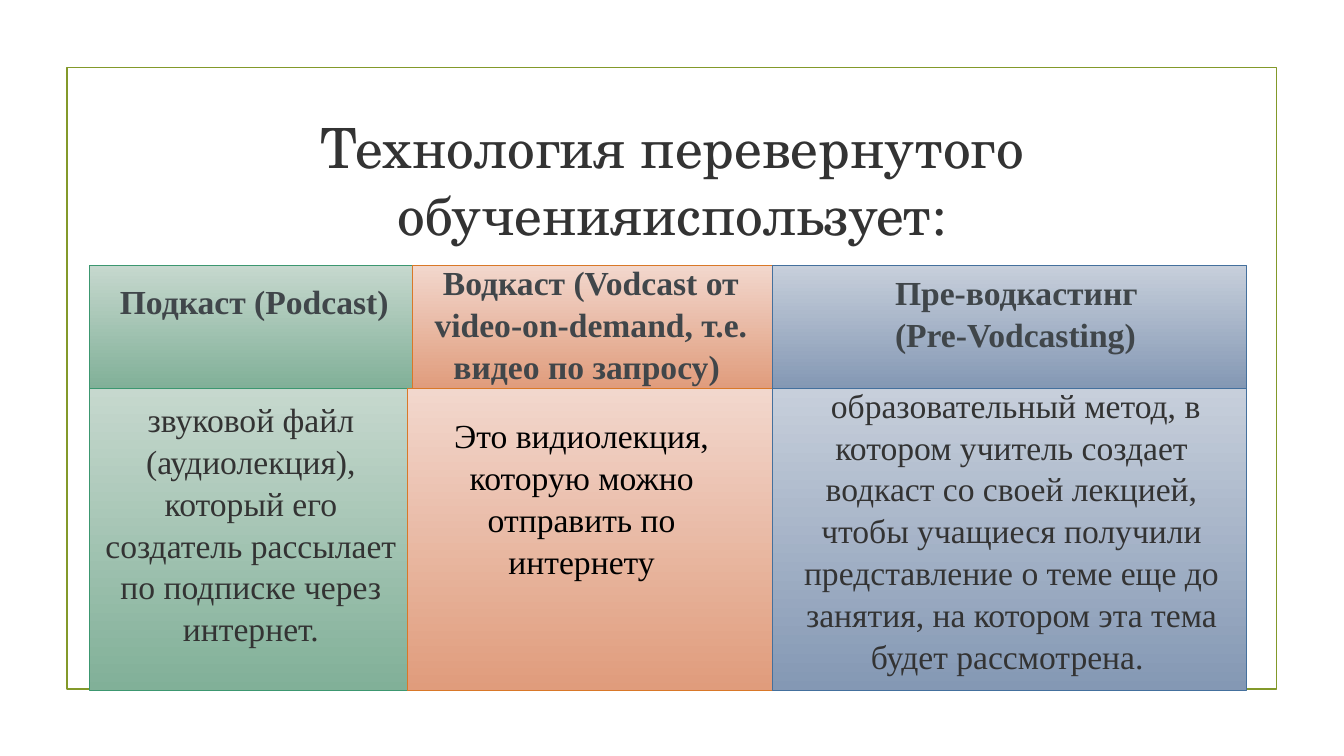
from pptx import Presentation
from pptx.dml.color import RGBColor
from pptx.enum.shapes import MSO_SHAPE
from pptx.enum.text import MSO_ANCHOR, PP_ALIGN
from pptx.util import Pt

RECT = MSO_SHAPE.RECTANGLE
TOP, MIDDLE = MSO_ANCHOR.TOP, MSO_ANCHOR.MIDDLE
LEFT, CENTER = PP_ALIGN.LEFT, PP_ALIGN.CENTER

COLORS = {
    "frame": "83992A", "text": "333333", "head": "40464A", "black": "000000",
    "green": ("C6D8CE", "81B098", "3C9770"),
    "orange": ("F2D7CD", "E09C7C", "D97828"),
    "blue": ("C7CFDB", "8498B4", "44709D"),
}
TITLE_FORMAT = {"name": "TeX Gyre Schola", "size": Pt(39.6), "bold": False}
HEAD_FORMAT = {"name": "Times New Roman", "size": Pt(24), "bold": True}
BODY_FORMAT = {"name": "Times New Roman", "size": Pt(24), "bold": False}

HEAD_TOP, BODY_TOP, BOTTOM = 189.4, 277.6, 493

# Each part: left, width, then the text box relative to the panel
COLUMNS = [
    ("green",
     (64, 230.4, (-3.6, 6.5, 248.4, 36), "Подкаст (Podcast)\u00a0", CENTER, "head"),
     (64, 230.4, (0, 2.5, 230.4, 181.4),
      "звуковой файл (аудиолекция), который его создатель рассылает "
      "по подписке через интернет.", CENTER, "text")),
    ("orange",
     (294.5, 257.8, (5.8, -7.2, 243.4, 94.3),
      "Водкаст (Vodcast от video-on-demand, т.е. видео по запросу)\u00a0", CENTER, "head"),
     (291, 262.8, (18.6, 14, 211.7, 123.8),
      "Это видиолекция, которую можно отправить по интернету", CENTER, "black")),
    ("blue",
     (551.5, 339.1, (80.7, 0, 210.2, 65.5),
      "Пре-водкастинг (Pre-Vodcasting)", LEFT, "head"),
     (551.5, 339.1, (0, -7.6, 342, 211),
      "\u00a0образовательный метод, в котором учитель создает водкаст со своей "
      "лекцией, чтобы учащиеся получили представление о теме еще до занятия, "
      "на котором эта тема будет рассмотрена.\u00a0", CENTER, "text")),
]


def rgb(value):
    return RGBColor.from_string(value)


def write(tf, text, fmt, color, align, anchor):
    tf.word_wrap = True
    tf.vertical_anchor = anchor
    p = tf.paragraphs[0]
    p.alignment = align
    r = p.add_run()
    r.text = text
    for name, value in fmt.items():
        setattr(r.font, name, value)
    r.font.color.rgb = rgb(COLORS[color])
    return p


def add_rect(s, x, y, w, h, line, width):
    sp = s.shapes.add_shape(RECT, Pt(x), Pt(y), Pt(w), Pt(h))
    sp.shadow.inherit = False
    sp.line.color.rgb = rgb(line)
    sp.line.width = Pt(width)
    return sp


def add_frame(s, x, y, w, h):
    add_rect(s, x, y, w, h, COLORS["frame"], 1.25).fill.background()


def add_title(s, x, y, w, h, text):
    sp = s.shapes.title
    sp.left, sp.top, sp.width, sp.height = Pt(x), Pt(y), Pt(w), Pt(h)
    write(sp.text_frame, text, TITLE_FORMAT, "text", CENTER, MIDDLE)


def add_panel(s, x, y, w, h, palette, text_box, text, fmt, align, color):
    start, end, line = COLORS[palette]
    sp = add_rect(s, x, y, w, h, line, 0.75)
    sp.fill.gradient()
    sp.fill.gradient_angle = 270
    for stop, value, position in zip(sp.fill.gradient_stops, (start, end), (0, 1)):
        stop.color.rgb = rgb(value)
        stop.position = position
    dx, dy, tw, th = text_box
    tb = s.shapes.add_textbox(Pt(x + dx), Pt(y + dy), Pt(tw), Pt(th))
    p = write(tb.text_frame, text, fmt, color, align, TOP)
    p.line_spacing = 1.04


def add_column(s, top, middle, bottom, palette, head, body):
    parts = ((head, top, middle, HEAD_FORMAT), (body, middle, bottom, BODY_FORMAT))
    for (x, w, text_box, text, align, color), y, end, fmt in parts:
        add_panel(s, x, y, w, end - y, palette, text_box, text, fmt, align, color)


def main():
    prs = Presentation()
    prs.slide_width, prs.slide_height = Pt(960), Pt(540)
    s = prs.slides.add_slide(prs.slide_layouts[5])
    add_frame(s, 47.8, 48.2, 864, 444.2)
    add_title(s, 102.2, 77, 756, 103, "Технология перевернутого обученияиспользует:")
    for palette, head, body in COLUMNS:
        add_column(s, HEAD_TOP, BODY_TOP, BOTTOM, palette, head, body)
    prs.save("out.pptx")


if __name__ == "__main__":
    main()
